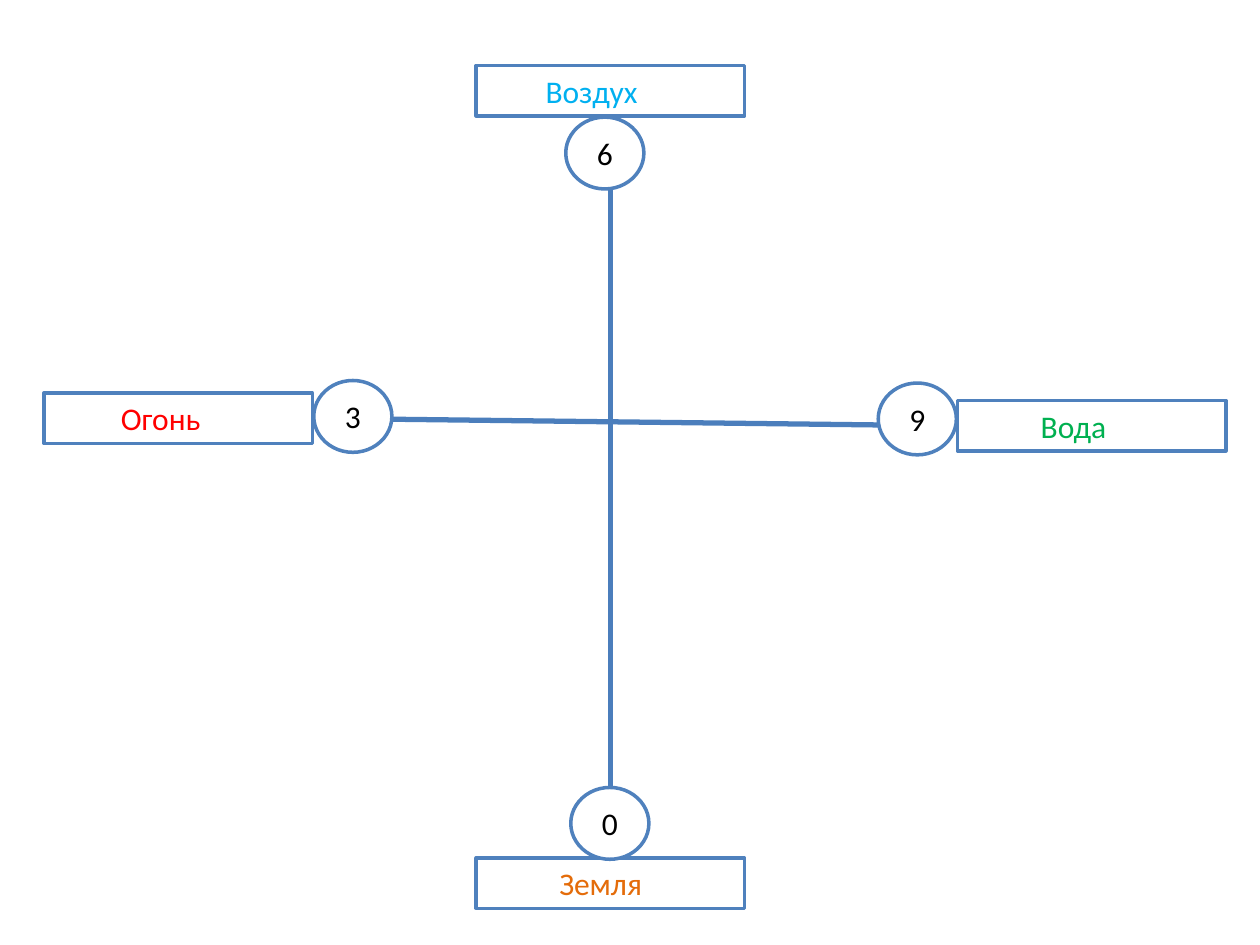
from lxml.etree import SubElement
from pptx import Presentation
from pptx.dml.color import RGBColor
from pptx.enum.shapes import MSO_CONNECTOR, MSO_SHAPE
from pptx.enum.text import MSO_ANCHOR, PP_ALIGN
from pptx.oxml.ns import qn
from pptx.util import Inches, Pt

LABEL_SIZE = (2.13, 0.4)
NUMBER_SIZE = (0.62, 0.57)
LABELS = {
    "air": ("Воздух", 3.78, 0.52, 0.55, "00B0F0"),
    "water": ("Вода", 7.6, 3.18, 0.66, "00B050"),
    "earth": ("Земля", 3.78, 6.81, 0.66, "E46C0A"),
    "fire": ("Огонь", 0.35, 3.12, 0.61, "FF0000"),
}
AXES = [("air", 2, "earth", 0), ("fire", 3, "water", 1)]
NUMBERS = [("9", 6.97, 3.04), ("6", 4.49, 0.93), ("3", 2.49, 3.02), ("0", 4.53, 6.25)]


def color(value):
    """Turn a hex string into a colour."""
    return RGBColor.from_string(value)


def add_box(page, kind, text, left, top, size, ink, align, indent):
    """Add an outlined white shape with one line of text."""
    box = page.shapes.add_shape(kind, *map(Inches, (left, top, *size)))
    box.shadow.inherit = False
    box.fill.solid()
    box.fill.fore_color.rgb = color("FFFFFF")
    box.line.color.rgb = color("4F81BD")
    box.line.width = Pt(2)
    frame = box.text_frame
    frame.word_wrap = True
    frame.vertical_anchor = MSO_ANCHOR.MIDDLE
    frame.margin_left = Inches(indent)
    para = frame.paragraphs[0]
    para.alignment = align
    span = para.add_run()
    span.text = text
    span.font.name = "Calibri"
    span.font.size = Pt(18)
    span.font.color.rgb = color(ink)
    return box


def add_axis(page, start, start_side, end, end_side):
    """Join two labels with a straight line."""
    axis = page.shapes.add_connector(MSO_CONNECTOR.STRAIGHT, 0, 0, 0, 0)
    axis.begin_connect(start, start_side)
    axis.end_connect(end, end_side)
    axis.line.color.rgb = color("4B7EBC")
    axis.line.width = Pt(3)
    SubElement(axis._element.spPr, qn("a:effectLst"))


def main():
    """Build the cross of four elements."""
    deck = Presentation()
    deck.slide_width, deck.slide_height = Inches(10), Inches(7.5)
    page = deck.slides.add_slide(deck.slide_layouts[6])
    labels = {
        name: add_box(page, MSO_SHAPE.RECTANGLE, text, left, top, LABEL_SIZE,
                      ink, PP_ALIGN.LEFT, indent)
        for name, (text, left, top, indent, ink) in LABELS.items()
    }
    for start, start_side, end, end_side in AXES:
        add_axis(page, labels[start], start_side, labels[end], end_side)
    for text, left, top in NUMBERS:
        add_box(page, MSO_SHAPE.OVAL, text, left, top, NUMBER_SIZE,
                "000000", PP_ALIGN.CENTER, 0.1)
    deck.save("out.pptx")


if __name__ == "__main__":
    main()
